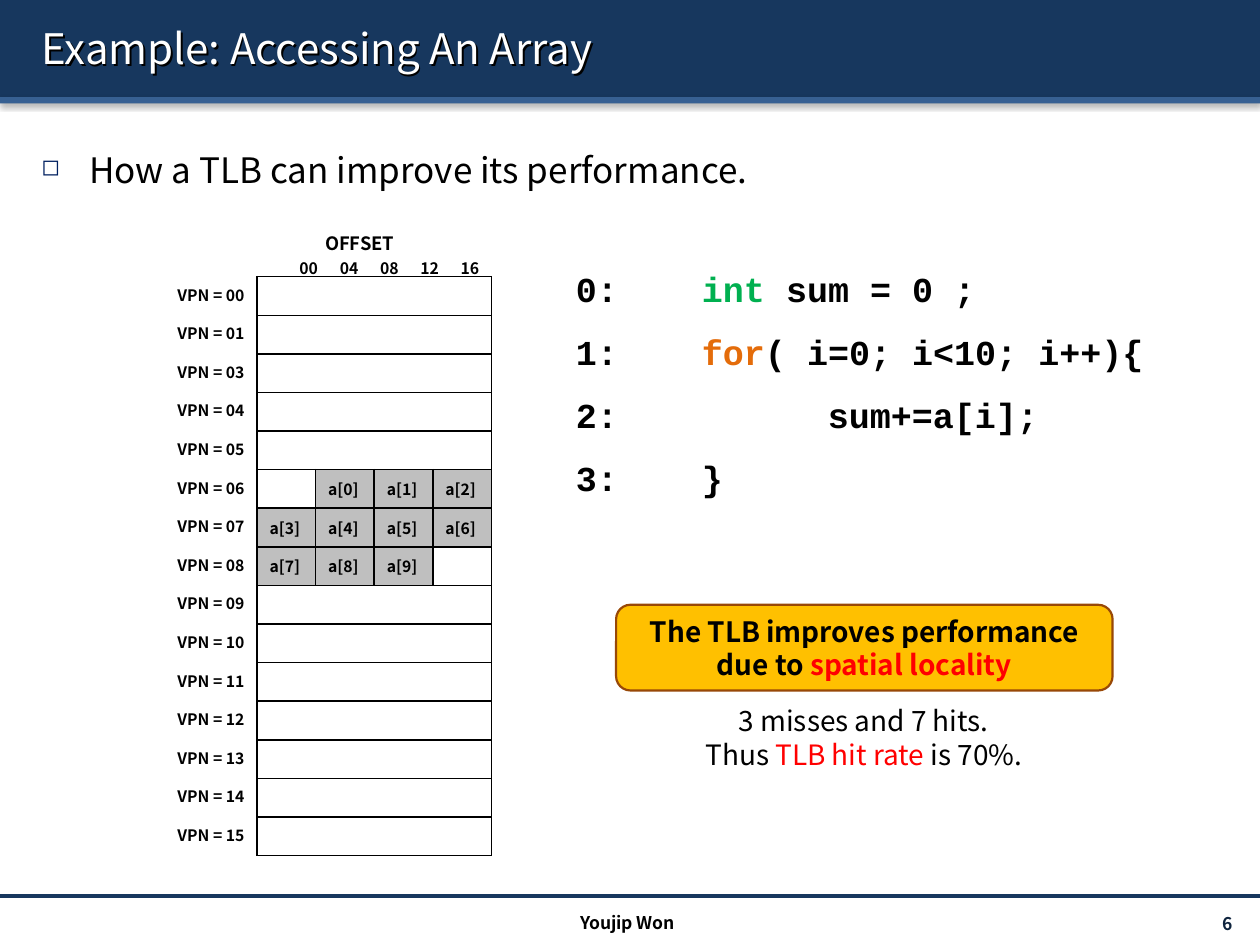
import dataclasses
import typing

import pptx
import pptx.dml.color
import pptx.enum.shapes
import pptx.enum.text
import pptx.oxml
import pptx.oxml.ns
import pptx.util
from lxml import etree

RGBColor = pptx.dml.color.RGBColor
Inches = pptx.util.Inches
Pt = pptx.util.Pt
qn = pptx.oxml.ns.qn
Align = pptx.enum.text.PP_ALIGN
Anchor = pptx.enum.text.MSO_ANCHOR
Kind = pptx.enum.shapes.MSO_SHAPE

BLACK = RGBColor(0x00, 0x00, 0x00)
WHITE = RGBColor(0xFF, 0xFF, 0xFF)
NAVY = RGBColor(0x17, 0x37, 0x5E)
BLUE = RGBColor(0x37, 0x60, 0x92)
INK = RGBColor(0x0F, 0x24, 0x3E)
GRAY = RGBColor(0xBF, 0xBF, 0xBF)
GREEN = RGBColor(0x00, 0xB0, 0x50)
ORANGE = RGBColor(0xE4, 0x6C, 0x0A)
RED = RGBColor(0xFF, 0x00, 0x00)
GOLD = RGBColor(0xFF, 0xC0, 0x00)
BROWN = RGBColor(0x98, 0x48, 0x07)
SANS = "Noto Sans CJK KR"
MONO = "Courier New"


class Run(typing.NamedTuple):
    text: str
    color: RGBColor = BLACK


@dataclasses.dataclass
class Style:
    size: float
    bold: bool = False
    font: str = SANS
    align: Align = Align.LEFT
    gap: float = 1.0
    anchor: Anchor = Anchor.MIDDLE
    pad: tuple = (0.1, 0.05, 0.1, 0.05)


class Label(typing.NamedTuple):
    box: tuple
    lines: list
    style: Style


def add_xml(node, tag: str, **attrs: str):
    return etree.SubElement(node, qn(tag), attrs)


def add_shade(shape, blur: float, dist: float, angle: int, alpha: int) -> None:
    props = shape._element.spPr
    for old in props.findall(qn("a:effectLst")):
        props.remove(old)
    effect = add_xml(props, "a:effectLst")
    shade = add_xml(effect, "a:outerShdw", blurRad=str(Pt(blur)), dist=str(Pt(dist)),
                    dir=str(angle * 60000), algn="t", rotWithShape="0")
    tint = add_xml(shade, "a:srgbClr", val="000000")
    add_xml(tint, "a:alpha", val=str(alpha * 1000))


def add_tabs(para, stops: list, kind: str) -> None:
    tabs = add_xml(para._p.get_or_add_pPr(), "a:tabLst")
    for stop in stops:
        add_xml(tabs, "a:tab", pos=str(Inches(stop)), algn=kind)


def add_runs(para, runs: list, style: Style) -> None:
    para.alignment = style.align
    if style.gap != 1:
        para.line_spacing = style.gap
    for item in runs:
        run = para.add_run()
        run.text = item.text
        font = run.font
        font.name, font.size, font.bold = style.font, Pt(style.size), style.bold
        font.color.rgb = item.color


def add_text(frame, lines: list, style: Style) -> None:
    frame.word_wrap = True
    frame.vertical_anchor = style.anchor
    (frame.margin_left, frame.margin_top,
     frame.margin_right, frame.margin_bottom) = map(Inches, style.pad)
    for i, runs in enumerate(lines):
        para = frame.add_paragraph() if i else frame.paragraphs[0]
        add_runs(para, runs, style)


def add_label(slide, label: Label):
    box = slide.shapes.add_textbox(*map(Inches, label.box))
    add_text(box.text_frame, label.lines, label.style)
    return box


def add_block(slide, kind: Kind, box: tuple, fill: RGBColor):
    shape = slide.shapes.add_shape(kind, *map(Inches, box))
    shape.shadow.inherit = False
    shape.fill.solid()
    shape.fill.fore_color.rgb = fill
    shape.line.fill.background()
    return shape


def set_edges(cell, edges: dict) -> None:
    props = cell._tc.get_or_add_tcPr()
    for side, color in edges.items():
        line = add_xml(props, f"a:ln{side}", w=str(Pt(1)))
        if color is None:
            add_xml(line, "a:noFill")
        else:
            fill = add_xml(line, "a:solidFill")
            add_xml(fill, "a:srgbClr", val=str(color))


def add_head(cell) -> None:
    set_edges(cell, dict.fromkeys("LRT"))
    cell.fill.background()
    cell.margin_right = 0
    top, marks = cell.text_frame.paragraphs[0], cell.text_frame.add_paragraph()
    top._p.get_or_add_pPr().set("marL", str(Inches(0.49)))
    add_tabs(marks, [1.13 + 0.32 * i for i in range(5)], "ctr")
    add_runs(top, [Run("OFFSET")], Style(10.5, True, align=Align.CENTER))
    offsets = "".join(f"\t{4 * i:02d}" for i in range(5))
    add_runs(marks, [Run(offsets)], Style(9, True))


def add_cell(cell, text: str, edges: dict, style: Style) -> None:
    set_edges(cell, edges)
    cell.vertical_anchor = style.anchor
    if text.startswith("a["):
        cell.fill.solid()
        cell.fill.fore_color.rgb = GRAY
    else:
        cell.fill.background()
    para = cell.text_frame.paragraphs[0]
    if text:
        add_runs(para, [Run(text)], style)
    else:
        add_xml(para._p, "a:endParaRPr", sz="900")


def add_pages(slide) -> None:
    pages = [0, 1, *range(3, 16)]
    first = 6 * 4 + 1  # a[0] sits in the second slot of page 6
    frame = slide.shapes.add_table(len(pages) + 1, 5, *map(Inches, (1.22, 1.77, 2.68, 5.02)))
    table = frame.table
    table.first_row = table.horz_banding = False
    for i, col in enumerate(table.columns):
        col.width = Inches(1.86 / 4 if i else 0.82)
    for i, row in enumerate(table.rows):
        row.height = Inches(4.6 / 15 if i else 0.41)
    table.cell(0, 0).merge(table.cell(0, 4))
    add_head(table.cell(0, 0))
    name = Style(9, True, align=Align.RIGHT, anchor=Anchor.TOP)
    item = Style(9, True)
    side = dict(L=WHITE, R=BLACK, T=WHITE, B=WHITE)
    for r, page in enumerate(pages, 1):
        add_cell(table.cell(r, 0), f"VPN = {page:02d}", side, name)
        for c in range(4):
            index = page * 4 + c - first
            text = f"a[{index}]" if 0 <= index < 10 else ""
            add_cell(table.cell(r, c + 1), text, dict.fromkeys("LRTB", BLACK), item)
        if page not in (6, 7, 8):
            table.cell(r, 1).merge(table.cell(r, 4))


def main() -> None:
    deck = pptx.Presentation()
    deck.slide_width, deck.slide_height = Inches(10), Inches(7.5)
    slide = deck.slides.add_slide(deck.slide_layouts[6])

    # Title band and footer rule
    for box, fill in (((0, 0, 10, 0.77), NAVY), ((0, 0.77, 10, 0.05), BLUE)):
        add_shade(add_block(slide, Kind.RECTANGLE, box, fill), 3.1, 1.6, 90, 38)
    rule = slide.shapes.add_connector(pptx.enum.shapes.MSO_CONNECTOR.STRAIGHT,
                                      *map(Inches, (0, 7.11, 10, 7.11)))
    rule.line.color.rgb = NAVY
    rule.line.width = Pt(2)
    add_xml(rule._element.spPr, "a:effectLst")

    # Title, with a sharp shadow
    title = add_label(slide, Label((0.23, 0.06, 9.61, 0.64),
                                   [[Run("Example: Accessing An Array", WHITE)]], Style(24)))
    add_shade(title, 0, 1.5, 45, 100)

    # Bullet line
    point = add_label(slide, Label((0.23, 0.96, 9.61, 0.8),
                                   [[Run("How a TLB can improve its performance.")]],
                                   Style(20, gap=1.5, anchor=Anchor.TOP)))
    props = point.text_frame.paragraphs[0]._p.get_or_add_pPr()
    props.set("marL", str(Inches(0.38)))
    props.set("indent", str(Inches(-0.38)))
    add_xml(add_xml(props, "a:buClr"), "a:srgbClr", val="002060")
    add_xml(props, "a:buSzPct", val="65000")
    add_xml(props, "a:buChar", char="◻")

    add_pages(slide)

    # Code listing
    code = [[Run("0:\t"), Run("int ", GREEN), Run("sum = 0 ;")],
            [Run("1:\t"), Run("for", ORANGE), Run("( i=0; i<10; i++){")],
            [Run("2:\t\tsum+=a[i];")],
            [Run("3:\t}")]]
    panel = add_block(slide, Kind.RECTANGLE, (4.29, 1.9, 5.28, 2.12), WHITE)
    add_text(panel.text_frame, code,
             Style(20, True, MONO, gap=1.5, pad=(0.28, 0.05, 0.1, 0.05)))
    for para in panel.text_frame.paragraphs:
        add_tabs(para, [1, 2], "l")

    # Callout
    note = add_block(slide, Kind.ROUNDED_RECTANGLE, (4.89, 4.8, 3.94, 0.68), GOLD)
    note.line.color.rgb = BROWN
    note.line.width = Pt(1.25)
    large = Style(16, True, align=Align.CENTER)
    add_text(note.text_frame, [[Run("The TLB improves performance")],
                               [Run("due to "), Run("spatial locality", RED)]], large)

    # Hit rate and footer
    rate = [[Run("3 misses and 7 hits.")],
            [Run("Thus "), Run("TLB hit rate ", RED), Run("is 70%.")]]
    for label in (
        Label((5.4, 5.51, 2.91, 0.68), rate, dataclasses.replace(large, bold=False)),
        Label((3.32, 7.2, 3.32, 0.24), [[Run("Youjip Won")]],
              Style(10, True, align=Align.CENTER)),
        Label((8.71, 7.21, 1.17, 0.24), [[Run("6", INK)]],
              Style(10, True, align=Align.RIGHT)),
    ):
        add_label(slide, label)

    deck.save("out.pptx")


if __name__ == "__main__":
    main()
